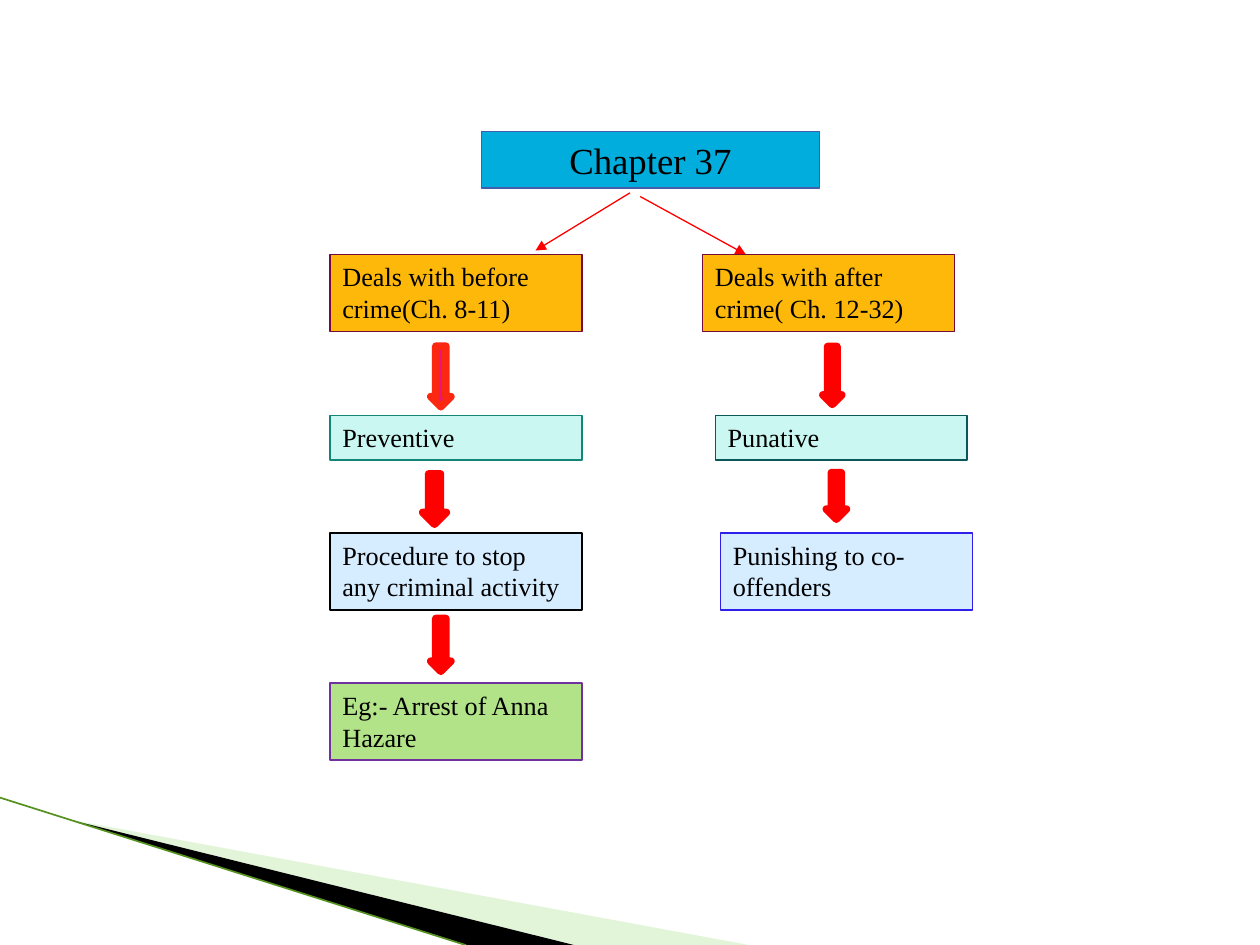
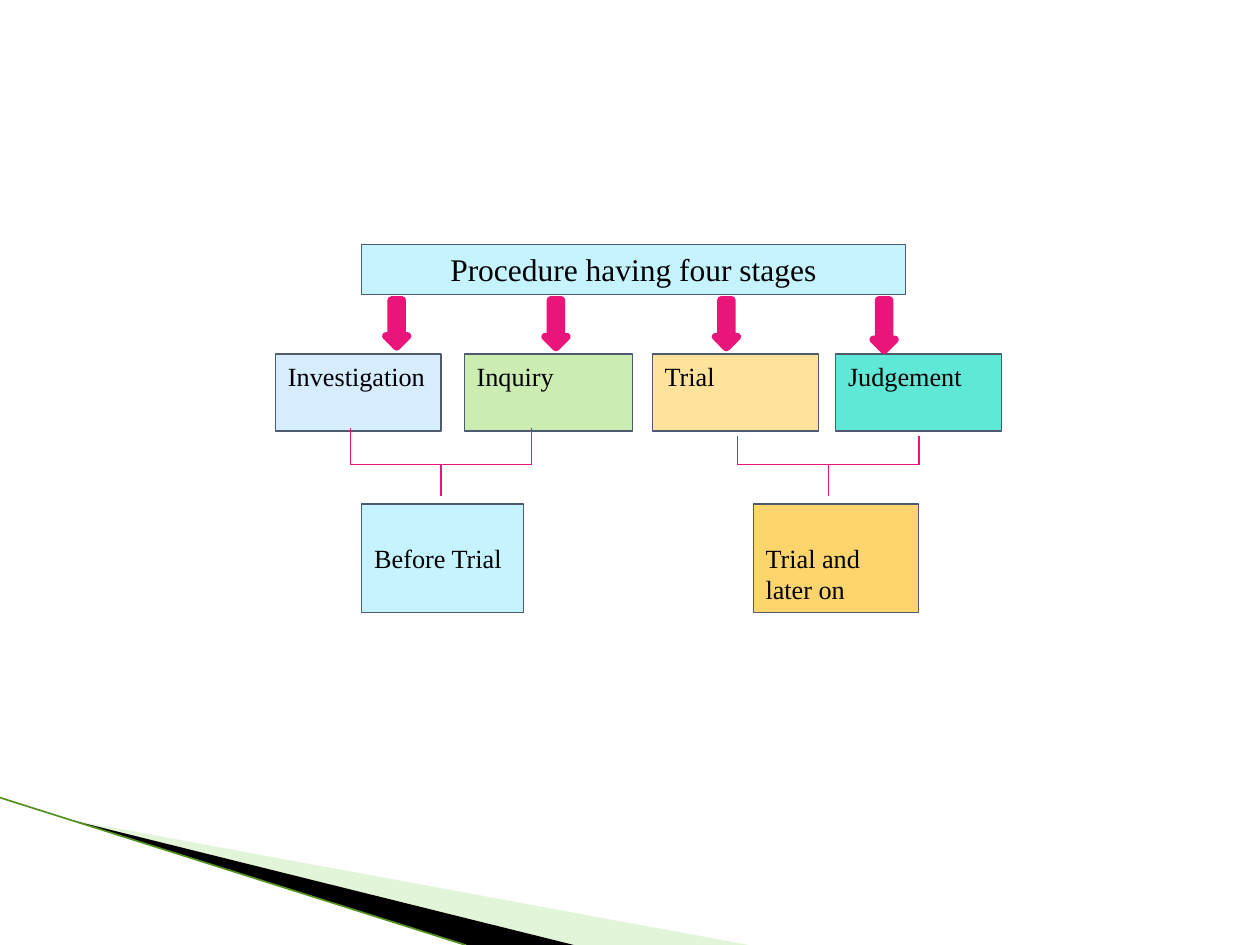
from lxml.etree import SubElement
from pptx import Presentation
from pptx.dml.color import RGBColor
from pptx.enum.shapes import MSO_CONNECTOR, MSO_SHAPE
from pptx.enum.text import MSO_ANCHOR, PP_ALIGN
from pptx.oxml.ns import qn
from pptx.util import Pt

FONT = "Times New Roman"
COLOURS = {
    "text": "000000", "black": "000000", "red": "FF0000", "vermilion": "FB2711",
    "pink": "EA157A", "wine": "750B3D", "slate": "4E5B6F", "navy": "435EAA",
    "blue": "00ADDC", "violet": "2E1FED", "purple": "7030A0", "teal": "138677",
    "deep_teal": "08585A", "amber": "FEB80A", "gold": "FED46C", "cream": "FFE39D",
    "mint": "CAF7F1", "turquoise": "5FE8D6", "sky": "D6ECFF", "ice": "C5F3FF",
    "leaf": "B2E389", "lime": "CCEDB1", "swoosh": "B8E7A1", "swoosh_edge": "55911F",
}


def colour(name):
    """Return the named palette colour."""
    return RGBColor.from_string(COLOURS[name])


def write_text(shape, text, size=15, align=PP_ALIGN.LEFT, top_inset=3.6):
    """Write one paragraph into a shape."""
    frame = shape.text_frame
    frame.word_wrap = True
    frame.vertical_anchor = MSO_ANCHOR.TOP
    frame.margin_left = frame.margin_right = Pt(7.2)
    frame.margin_top, frame.margin_bottom = Pt(top_inset), Pt(0)
    paragraph = frame.paragraphs[0]
    paragraph.alignment = align
    run = paragraph.add_run()
    run.text = text
    run.font.name = FONT
    run.font.size = Pt(size)
    run.font.color.rgb = colour("text")


def add_filled(slide, kind, box, fill, line, line_width=0.75):
    """Add a preset shape with a solid fill and outline."""
    shape = slide.shapes.add_shape(kind, *map(Pt, box))
    shape.shadow.inherit = False
    shape.fill.solid()
    shape.fill.fore_color.rgb = colour(fill)
    shape.line.color.rgb = colour(line)
    shape.line.width = Pt(line_width)
    return shape


def add_label(slide, box, text, fill, line="slate", **text_format):
    """Add an outlined box with text."""
    write_text(add_filled(slide, MSO_SHAPE.RECTANGLE, box, fill, line), text, **text_format)


def add_down_arrow(slide, box, fill="red", line=None):
    """Add a thick rounded arrow pointing down."""
    add_filled(slide, MSO_SHAPE.DOWN_ARROW, box, fill, line or fill, 4.33)


def add_line(slide, start, end, line, width=0.75, arrow=False):
    """Add a straight connector, with an arrowhead at its end on request."""
    connector = slide.shapes.add_connector(MSO_CONNECTOR.STRAIGHT, *map(Pt, (*start, *end)))
    connector.line.color.rgb = colour(line)
    connector.line.width = Pt(width)
    if arrow:
        SubElement(connector.line._get_or_add_ln(), qn("a:tailEnd"), type="triangle")
    SubElement(connector._element.spPr, qn("a:effectLst"))


def add_wedge(slide, points, fill, alpha=100):
    """Add a closed outline without a border."""
    builder = slide.shapes.build_freeform(*map(Pt, points[0]))
    builder.add_line_segments([tuple(map(Pt, point)) for point in points[1:]])
    shape = builder.convert_to_shape()
    shape.shadow.inherit = False
    shape.fill.solid()
    shape.fill.fore_color.rgb = colour(fill)
    shape.line.fill.background()
    if alpha < 100:
        fill_colour = shape._element.spPr.find(qn("a:solidFill"))[0]
        SubElement(fill_colour, qn("a:alpha"), val=str(alpha * 1000))


def draw_swoosh(slide, left, top, height):
    """Draw the wedges and edge line of the lower left corner."""
    bottom = top + height
    tip = (left + 39, top + 12.4)
    add_wedge(slide, [tip, (left + 428, bottom), (left + 328, bottom)], "swoosh", 40)
    add_wedge(slide, [tip, (left + 328, bottom), (left + 267, bottom)], "black")
    add_line(slide, (left, top), (left + 266, bottom), "swoosh_edge", 0.95)


def draw_chain(slide, left, top, labels, arrows):
    """Draw a column of boxes and the arrows between them."""
    for x, y, height, text, fill, line in labels:
        add_label(slide, (left + x, top + y, 144, height), text, fill, line)
    for x, y, width, height, *paint in arrows:
        add_down_arrow(slide, (left + x, top + y, width, height), *paint)


def draw_stages(slide, left, top, stages):
    """Draw a row of stage boxes, each with an arrow above it."""
    for x, width, text, fill, arrow_x, arrow_height in stages:
        add_label(slide, (left + x, top, width, 44), text, fill)
        add_down_arrow(slide, (left + arrow_x, top - 31, 12.4, arrow_height), "pink")


def draw_bracket(slide, left, top, width, height):
    """Draw a bracket that joins two stages and drops a stem."""
    right, bottom, centre = left + width, top + height, left + width / 2
    for start, end in (
        ((left, top), (left, bottom)),
        ((right, top), (right, bottom)),
        ((left, bottom), (right, bottom)),
        ((centre, bottom), (centre, bottom + 18)),
    ):
        add_line(slide, start, end, "pink")


def add_base_slide(presentation):
    """Add a blank slide with the shared corner decoration."""
    slide = presentation.slides.add_slide(presentation.slide_layouts[6])
    draw_swoosh(slide, 0, 455.8, 84.2)
    return slide


def build_chapter_slide(presentation):
    """Build the tree of the two groups of chapters."""
    slide = add_base_slide(presentation)
    add_label(slide, (275, 75, 193.5, 32.5), "Chapter 37", "blue", "navy",
              size=21, align=PP_ALIGN.CENTER)
    add_line(slide, (360, 110.2), (306, 143.2), "red", arrow=True)
    add_line(slide, (365.8, 112.3), (426.2, 145.4), "red", arrow=True)
    draw_chain(slide, 188.6, 145.4, [
        (0, 0, 44, "Deals with before crime(Ch. 8-11)", "amber", "wine"),
        (0, 92, 25.5, "Preventive", "mint", "teal"),
        (0, 159.2, 44, "Procedure to stop any criminal activity", "sky", "black"),
        (0, 245, 44, "Eg:- Arrest of Anna Hazare", "leaf", "purple"),
    ], [
        (57.6, 52.4, 11.5, 34.6, "pink", "vermilion"),
        (53, 125.4, 13.5, 28.8),
        (57.6, 208, 11.5, 30.2),
    ])
    draw_chain(slide, 401.5, 145.4, [
        (0, 0, 44, "Deals with after crime( Ch. 12-32)", "amber", "wine"),
        (7.2, 92, 25.5, "Punative", "mint", "deep_teal"),
        (10.2, 159.2, 44, "Punishing to co- offenders", "sky", "violet"),
    ], [
        (68.7, 52.6, 10.8, 33.1),
        (70.7, 124.7, 11.5, 26.6),
    ])


def build_stages_slide(presentation):
    """Build the tree of the four stages of procedure."""
    slide = add_base_slide(presentation)
    add_label(slide, (206.5, 139.6, 311, 28.8), "Procedure having four stages", "ice",
              size=18, align=PP_ALIGN.CENTER)
    draw_stages(slide, 157.5, 202.4, [
        (0, 94.5, "Investigation", "sky", 63, 26.8),
        (107.8, 96, "Inquiry", "lime", 154, 27.2),
        (215.2, 95, "Trial", "cream", 251.4, 27.2),
        (320, 95, "Judgement", "turquoise", 341.5, 28.8),
    ])
    draw_bracket(slide, 200.2, 244.4, 103.6, 21.2)
    draw_bracket(slide, 421.5, 249, 103.6, 16.6)
    add_label(slide, (206.8, 288, 92.4, 62), "Before Trial", "ice", top_inset=21.6)
    add_label(slide, (430.4, 288, 94.5, 62), "Trial and later on", "gold", top_inset=21.6)


def main():
    """Build and save the presentation."""
    presentation = Presentation()
    presentation.slide_width, presentation.slide_height = Pt(720), Pt(540)
    build_chapter_slide(presentation)
    build_stages_slide(presentation)
    presentation.save("out.pptx")


if __name__ == "__main__":
    main()
